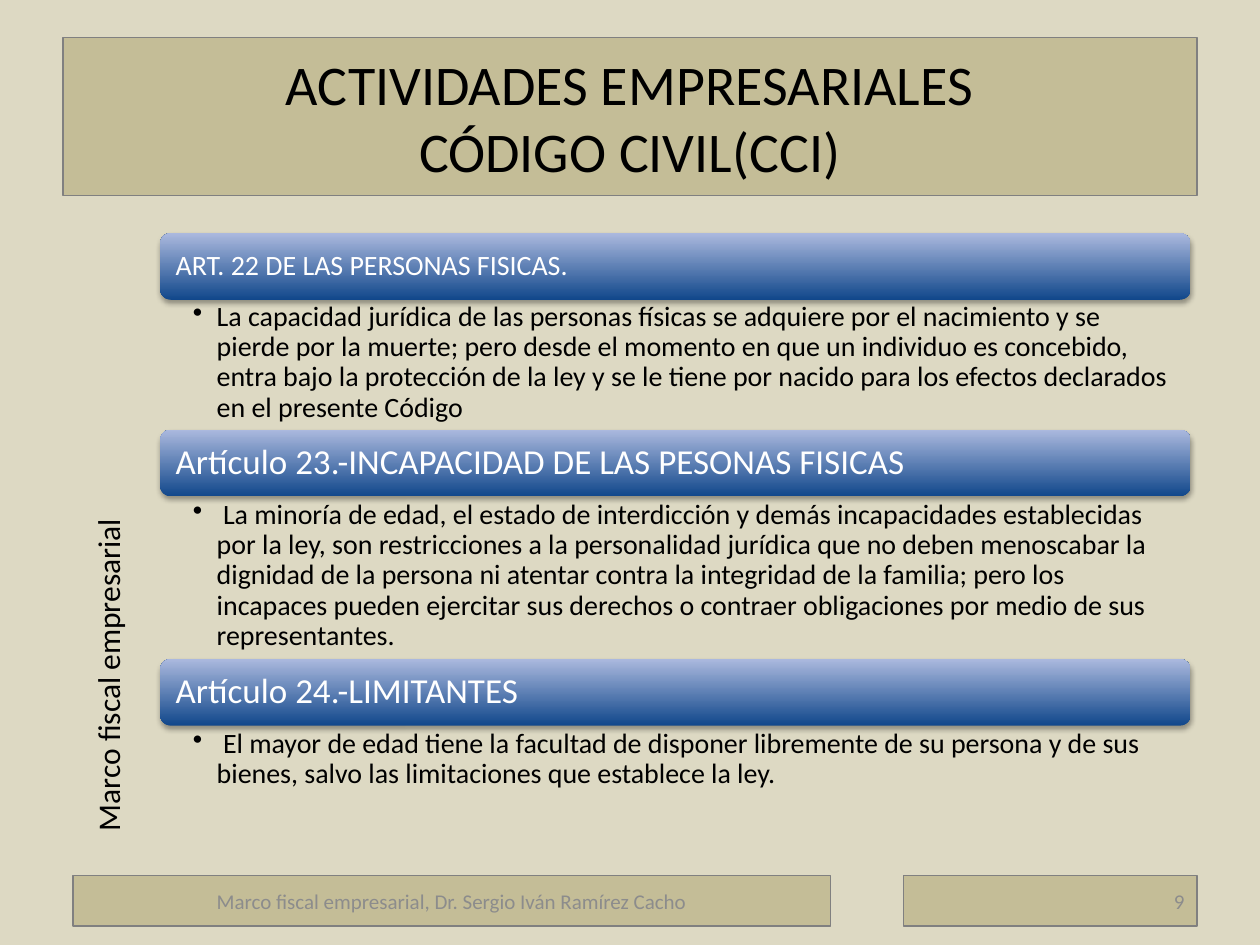
from lxml import etree
from pptx import Presentation
from pptx.dml.color import RGBColor
from pptx.enum.shapes import MSO_SHAPE
from pptx.enum.text import MSO_ANCHOR, PP_ALIGN
from pptx.oxml import parse_xml
from pptx.oxml.ns import qn
from pptx.util import Inches, Pt

LEFT, CENTER, RIGHT = PP_ALIGN.LEFT, PP_ALIGN.CENTER, PP_ALIGN.RIGHT
TOP, MIDDLE = MSO_ANCHOR.TOP, MSO_ANCHOR.MIDDLE

SAND = RGBColor(0xDD, 0xD9, 0xC3)
KHAKI = RGBColor(0xC4, 0xBD, 0x97)
GRAY = RGBColor(0x80, 0x80, 0x80)
FOOTER_GRAY = RGBColor(0x8C, 0x8C, 0x8C)
DARK_BLUE = RGBColor(0x11, 0x47, 0x8B)
LIGHT_BLUE = RGBColor(0xAB, 0xB9, 0xDE)
BLACK = RGBColor(0, 0, 0)
WHITE = RGBColor(0xFF, 0xFF, 0xFF)

SIDE_LABEL = "Marco fiscal empresarial"
# text, (left, top, width, height), size, colour, alignment
PANELS = [
    ("ACTIVIDADES EMPRESARIALES\vCÓDIGO CIVIL(CCI)",
     (0.5, 0.3, 9, 1.25), 32, BLACK, CENTER),
    ("Marco fiscal empresarial, Dr. Sergio Iván Ramírez Cacho",
     (0.58, 6.95, 6.01, 0.4), 12, FOOTER_GRAY, CENTER),
    ("9", (7.17, 6.95, 2.33, 0.4), 12, FOOTER_GRAY, RIGHT),
]
# heading, heading size, body, body height, (top inset, right inset)
ARTICLES = [
    ("ART. 22 DE LAS PERSONAS FISICAS.", 16,
     "La capacidad jurídica de las personas físicas se adquiere por el "
     "nacimiento y se pierde por la muerte; pero desde el momento en que un "
     "individuo es concebido, entra bajo la protección de la ley y se le tiene "
     "por nacido para los efectos declarados en el presente Código",
     1.03, (0.02, 0.12)),
    ("Artículo 23.-INCAPACIDAD DE LAS PESONAS FISICAS", 20,
     " La minoría de edad, el estado de interdicción y demás incapacidades "
     "establecidas por la ley, son restricciones a la personalidad jurídica "
     "que no deben menoscabar la dignidad de la persona ni atentar contra la "
     "integridad de la familia; pero los incapaces pueden ejercitar sus "
     "derechos o contraer obligaciones por medio de sus representantes.",
     1.29, (0.03, 0.16)),
    ("Artículo 24.-LIMITANTES", 20,
     " El mayor de edad tiene la facultad de disponer libremente de su persona "
     "y de sus bienes, salvo las limitaciones que establece la ley.",
     0.55, (0.03, 0.16)),
]
LIST_LEFT, LIST_TOP, LIST_WIDTH, BAR_HEIGHT = 1.27, 1.85, 8.18, 0.53

SHADOW = (
    '<a:effectLst xmlns:a="http://schemas.openxmlformats.org/drawingml/2006/main">'
    f'<a:outerShdw blurRad="{Pt(3.1)}" dist="{Pt(1.8)}" dir="5400000" '
    'rotWithShape="0"><a:srgbClr val="000000"><a:alpha val="35000"/>'
    '</a:srgbClr></a:outerShdw></a:effectLst>')


def write(shape, text, size, color, align=LEFT, anchor=MIDDLE,
          insets=(0.1, 0.05, 0.1, 0.05), spacing=None, bullet=False):
    """Fill the shape with one paragraph; insets are left, top, right, bottom."""
    frame = shape.text_frame
    frame.word_wrap = True
    frame.vertical_anchor = anchor
    (frame.margin_left, frame.margin_top,
     frame.margin_right, frame.margin_bottom) = map(Inches, insets)
    para = frame.paragraphs[0]
    para.text = text
    para.alignment = align
    if spacing:
        para.line_spacing = spacing
    if bullet:
        props = para._p.get_or_add_pPr()
        props.set("marL", str(Inches(0.19)))
        props.set("indent", str(-Inches(0.19)))
        etree.SubElement(props, qn("a:buChar")).set("char", "•")
    for span in para.runs:
        span.font.name = "Calibri"
        span.font.size = Pt(size)
        span.font.color.rgb = color


def add_panel(page, place):
    panel = page.shapes.add_shape(MSO_SHAPE.RECTANGLE, *map(Inches, place))
    panel.shadow.inherit = False
    panel.fill.solid()
    panel.fill.fore_color.rgb = KHAKI
    panel.line.color.rgb = GRAY
    panel.line.width = Pt(0.75)
    return panel


def add_bar(page, place):
    """Add a rounded heading bar, light at the top, with a soft shadow."""
    bar = page.shapes.add_shape(MSO_SHAPE.ROUNDED_RECTANGLE, *map(Inches, place))
    bar.fill.gradient()
    bar.fill.gradient_angle = 90
    for stop, color in zip(bar.fill.gradient_stops, (DARK_BLUE, LIGHT_BLUE)):
        stop.color.rgb = color
    bar.line.fill.background()
    bar._element.spPr.append(parse_xml(SHADOW))
    return bar


def add_text(page, place):
    return page.shapes.add_textbox(*map(Inches, place))


def main():
    deck = Presentation()
    deck.slide_width, deck.slide_height = Inches(10), Inches(7.5)
    page = deck.slides.add_slide(deck.slide_layouts[6])
    page.background.fill.solid()
    page.background.fill.fore_color.rgb = SAND

    label = add_text(page, (-1.62, 4.02, 4.95, 0.4))
    label.rotation = 270
    write(label, SIDE_LABEL, 18, BLACK, anchor=TOP)

    for text, place, size, color, align in PANELS:
        write(add_panel(page, place), text, size, color, align=align)

    top = LIST_TOP
    for heading, size, body, height, (edge, right) in ARTICLES:
        bar = add_bar(page, (LIST_LEFT, top, LIST_WIDTH, BAR_HEIGHT))
        write(bar, heading, size, WHITE, spacing=0.9)
        top += BAR_HEIGHT
        box = add_text(page, (LIST_LEFT, top, LIST_WIDTH, height))
        write(box, body, 16, BLACK, anchor=TOP, spacing=0.9, bullet=True,
              insets=(0.26, edge, right, edge))
        top += height

    deck.save("out.pptx")


if __name__ == "__main__":
    main()
